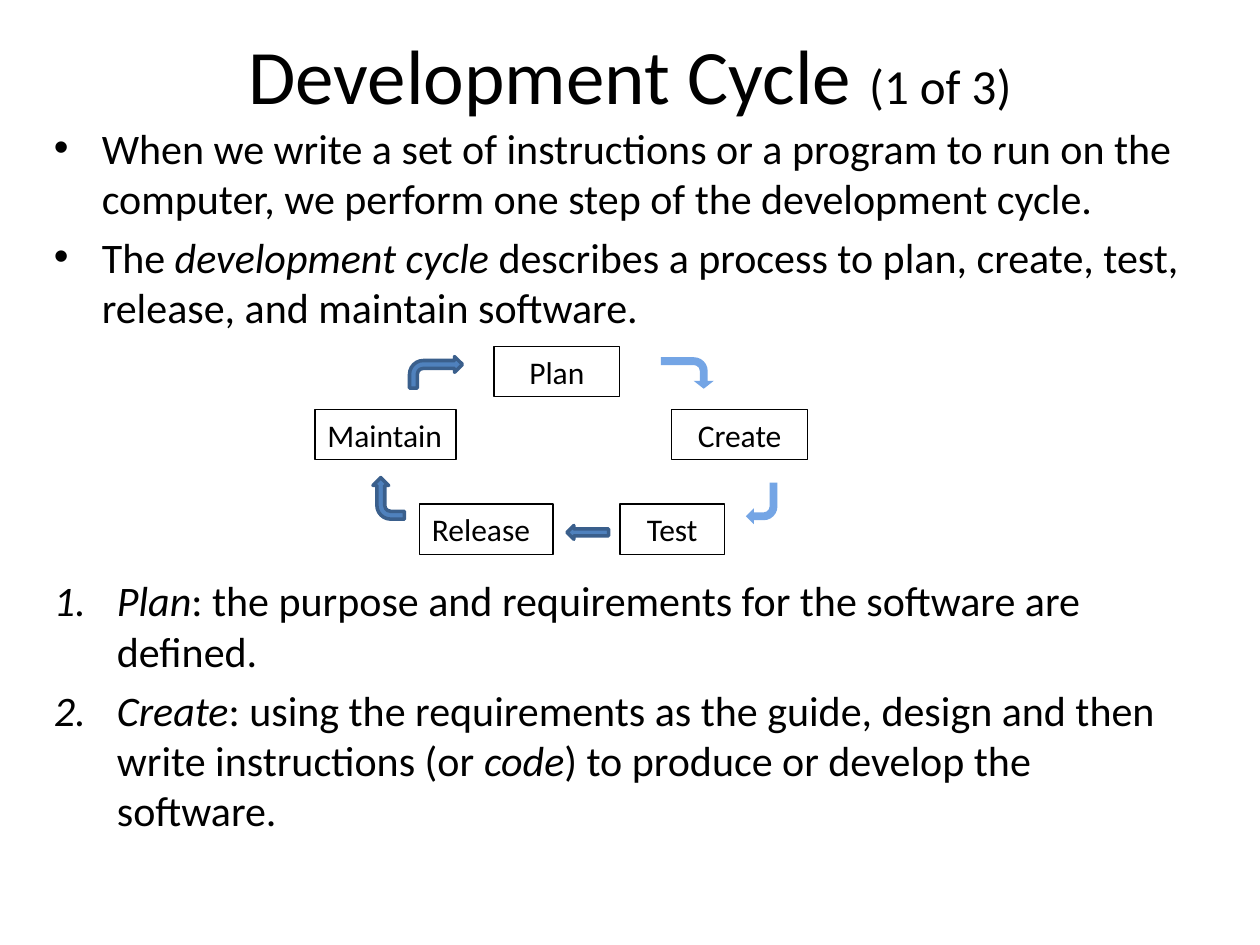
from dataclasses import dataclass

from lxml.etree import SubElement
from pptx import Presentation
from pptx.dml.color import RGBColor
from pptx.enum.shapes import MSO_SHAPE
from pptx.enum.text import MSO_ANCHOR, MSO_AUTO_SIZE, PP_ALIGN
from pptx.oxml.ns import qn
from pptx.util import Inches, Pt


@dataclass(frozen=True)
class Theme:
    font: str = "Calibri"
    ink: RGBColor = RGBColor(0x00, 0x00, 0x00)
    arrow: RGBColor = RGBColor(0x4F, 0x81, 0xBD)
    arrow_edge: RGBColor = RGBColor(0x3A, 0x5F, 0x8C)
    light_arrow: RGBColor = RGBColor(0x74, 0xA5, 0xE5)
    title: Pt = Pt(44)
    counter: Pt = Pt(28)
    body: Pt = Pt(24)
    label: Pt = Pt(18)


theme = Theme()


def style_run(run, size, italic=False):
    run.font.name = theme.font
    run.font.size = size
    run.font.color.rgb = theme.ink
    if italic:
        run.font.italic = True


def place(area):
    return [Inches(length) for length in area]


prs = Presentation()
prs.slide_width, prs.slide_height = Inches(10), Inches(7.5)
slide = prs.slides.add_slide(prs.slide_layouts[6])

title = slide.shapes.add_textbox(*place((0.5, 0.17, 9, 0.83)))
title.text_frame.word_wrap = True
title.text_frame.vertical_anchor = MSO_ANCHOR.MIDDLE
heading = title.text_frame.paragraphs[0]
heading.alignment = PP_ALIGN.CENTER
for words, size in (("Development Cycle ", theme.title), ("(1 of 3)", theme.counter)):
    run = heading.add_run()
    run.text = words
    style_run(run, size)

ITEM_GAP = Pt(4.8)
DIAGRAM_GAP = Pt(138.7)
BULLET = (0.38, "buChar", {"char": "•"})
NUMBER = (0.5, "buAutoNum", {"type": "arabicPeriod"})
items = [
    (BULLET, ITEM_GAP, [
        ("When we write a set of instructions or a program to run on the "
         "computer, we perform one step of the development cycle.", False)]),
    (BULLET, ITEM_GAP, [
        ("The ", False), ("development cycle ", True),
        ("describes a process to plan, create, test, release, and maintain software.", False)]),
    (NUMBER, DIAGRAM_GAP, [
        ("Plan", True),
        (": the purpose and requirements for the software are defined.", False)]),
    (NUMBER, ITEM_GAP, [
        ("Create", True),
        (": using the requirements as the guide, design and then write instructions (or ", False),
        ("code", True), (") to produce or develop the software.", False)]),
]

body = slide.shapes.add_textbox(*place((0.33, 0.92, 9.17, 6.08)))
body.text_frame.word_wrap = True
for index, ((indent, marker, marker_settings), gap, pieces) in enumerate(items):
    item = body.text_frame.paragraphs[0] if index == 0 else body.text_frame.add_paragraph()
    item.space_before = gap
    properties = item._p.get_or_add_pPr()
    properties.set("marL", str(Inches(indent)))
    properties.set("indent", str(-Inches(indent)))
    SubElement(properties, qn("a:buFont"), typeface="Arial" if marker == "buChar" else "+mj-lt")
    SubElement(properties, qn(f"a:{marker}"), **marker_settings)
    for words, italic in pieces:
        run = item.add_run()
        run.text = words
        style_run(run, theme.body, italic)

cycle = slide.shapes.add_group_shape()

STAGE_HEIGHT = 0.4
stages = [
    ("Plan", 3.92, 2.75, 1, PP_ALIGN.CENTER, True),
    ("Test", 4.92, 4, 0.83, PP_ALIGN.CENTER, True),
    ("Create", 5.33, 3.25, 1.08, PP_ALIGN.CENTER, True),
    ("Release", 3.33, 4, 1.06, PP_ALIGN.LEFT, True),
    ("Maintain", 2.5, 3.25, 1.12, PP_ALIGN.LEFT, False),
]
for name, left, top, width, alignment, wrap in stages:
    stage = cycle.shapes.add_shape(MSO_SHAPE.RECTANGLE, *place((left, top, width, STAGE_HEIGHT)))
    stage.shadow.inherit = False
    stage.fill.background()
    stage.line.color.rgb = theme.ink
    stage.line.width = Pt(0.75)
    frame = stage.text_frame
    frame.text = name
    frame.word_wrap = wrap
    frame.auto_size = MSO_AUTO_SIZE.SHAPE_TO_FIT_TEXT
    frame.vertical_anchor = MSO_ANCHOR.TOP
    frame.paragraphs[0].alignment = alignment
    style_run(frame.paragraphs[0].runs[0], theme.label)

arrows = [
    (MSO_SHAPE.BENT_ARROW, (5.92, 3.83, 0.25, 0.33), 180, True),
    (MSO_SHAPE.BENT_ARROW, (3.25, 2.83, 0.42, 0.25), 0, False),
    (MSO_SHAPE.BENT_ARROW, (2.92, 3.83, 0.33, 0.25), 270, False),
    (MSO_SHAPE.BENT_ARROW, (5.33, 2.75, 0.25, 0.42), 90, True),
    (MSO_SHAPE.LEFT_ARROW, (4.5, 4.17, 0.33, 0.11), 0, False),
]
for kind, area, rotation, light in arrows:
    arrow = cycle.shapes.add_shape(kind, *place(area))
    arrow.shadow.inherit = False
    arrow.rotation = rotation
    arrow.fill.solid()
    arrow.fill.fore_color.rgb = theme.light_arrow if light else theme.arrow
    if light:
        arrow.line.fill.background()
    else:
        arrow.line.color.rgb = theme.arrow_edge
        arrow.line.width = Pt(2)
    if rotation == 90:
        arrow.adjustments[1] = 0.32

prs.save("out.pptx")
